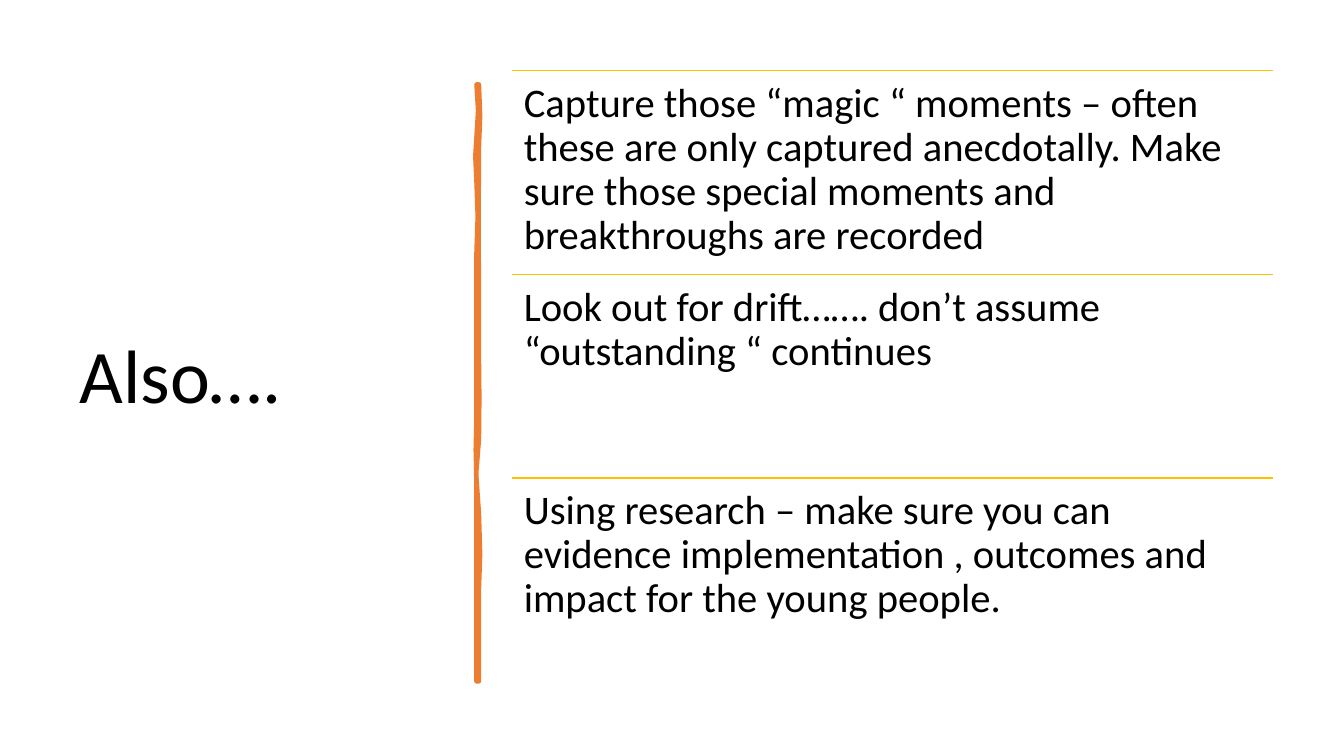
from dataclasses import dataclass

from lxml.etree import SubElement
from pptx import Presentation
from pptx.dml.color import RGBColor as Rgb
from pptx.enum.shapes import MSO_CONNECTOR as Connector
from pptx.enum.text import MSO_ANCHOR as Anchor, PP_ALIGN as Align
from pptx.oxml.ns import qn
from pptx.util import Cm, Pt

TITLE = "Also…."
POINTS = [
    "Capture those “magic “ moments – often these are only captured anecdotally. "
    "Make sure those special moments and breakthroughs are recorded",
    "Look out for drift……. don’t assume “outstanding “ continues",
    "Using research – make sure you can evidence implementation , outcomes and "
    "impact for the young people.",
]
RIGHT_EDGE = [
    (12.07, 2.13), (12.1, 2.92), (12.07, 3.71), (12.06, 5.74), (12.07, 7.47),
    (12.07, 9.04), (12.08, 10.03), (12.07, 11.07), (12.0, 11.94),
    (12.07, 12.95), (12.1, 13.97), (12.07, 14.83), (12.07, 17.17),
]
LEFT_EDGE = [
    (12.01, 17.17), (12.01, 15.57), (12.01, 12.12), (11.99, 11.33),
    (12.01, 10.54), (12.01, 6.35), (12.04, 5.46), (12.01, 4.6),
    (11.98, 3.94), (12.05, 2.79), (12.01, 2.13),
]
LIST_LEFT, LIST_TOP, LIST_WIDTH, ROW_HEIGHT = 12.9, 1.78, 19.18, 5.13


@dataclass(frozen=True)
class Theme:
    font: str = "Calibri"
    text: Rgb = Rgb(0, 0, 0)
    stroke: Rgb = Rgb(0xED, 0x7D, 0x31)
    rule: Rgb = Rgb(0xFF, 0xC0, 0x00)
    title_size: Pt = Pt(54)
    body_size: Pt = Pt(29)
    stroke_width: Pt = Pt(3.25)
    rule_width: Pt = Pt(1)


THEME = Theme()


def write(frame, text, size, anchor):
    """Fill a text frame with one formatted paragraph."""
    frame.word_wrap = True
    frame.vertical_anchor = anchor
    para = frame.paragraphs[0]
    para.text = text
    para.alignment = Align.LEFT
    para.line_spacing = 0.9
    para.font.name = THEME.font
    para.font.size = size
    para.font.color.rgb = THEME.text


def add_title(page):
    """Place the title in the left column."""
    title = page.shapes.title
    title.left, title.top = Cm(1.75), Cm(1.78)
    title.width, title.height = Cm(9.5), Cm(15.52)
    write(title.text_frame, TITLE, THEME.title_size, Anchor.MIDDLE)


def add_brush_stroke(page):
    """Draw the uneven vertical divider."""
    start, *rest = [(Cm(x), Cm(y)) for x, y in RIGHT_EDGE + LEFT_EDGE]
    builder = page.shapes.build_freeform(*start)
    builder.add_line_segments(rest, close=True)
    stroke = builder.convert_to_shape()
    stroke.shadow.inherit = False
    stroke.fill.solid()
    stroke.fill.fore_color.rgb = THEME.stroke
    stroke.line.color.rgb = THEME.stroke
    stroke.line.width = THEME.stroke_width
    SubElement(stroke.line._get_or_add_ln(), qn("a:round"))


def add_point(page, text, top):
    """Add one ruled row of the list."""
    left, right = Cm(LIST_LEFT), Cm(LIST_LEFT + LIST_WIDTH)
    rule = page.shapes.add_connector(Connector.STRAIGHT, left, top, right, top)
    rule.line.color.rgb = THEME.rule
    rule.line.width = THEME.rule_width
    SubElement(rule._element.spPr, qn("a:effectLst"))
    box = page.shapes.add_textbox(left, top, Cm(LIST_WIDTH), Cm(ROW_HEIGHT))
    frame = box.text_frame
    frame.margin_left = frame.margin_right = Cm(0.3)
    frame.margin_top = frame.margin_bottom = Cm(0.3)
    write(frame, text, THEME.body_size, Anchor.TOP)


def main():
    """Build and save the slide."""
    deck = Presentation()
    deck.slide_width, deck.slide_height = Cm(33.87), Cm(19.05)
    page = deck.slides.add_slide(deck.slide_layouts[5])
    add_title(page)
    add_brush_stroke(page)
    for row, text in enumerate(POINTS):
        add_point(page, text, Cm(LIST_TOP + row * ROW_HEIGHT))
    deck.save("out.pptx")


if __name__ == "__main__":
    main()
